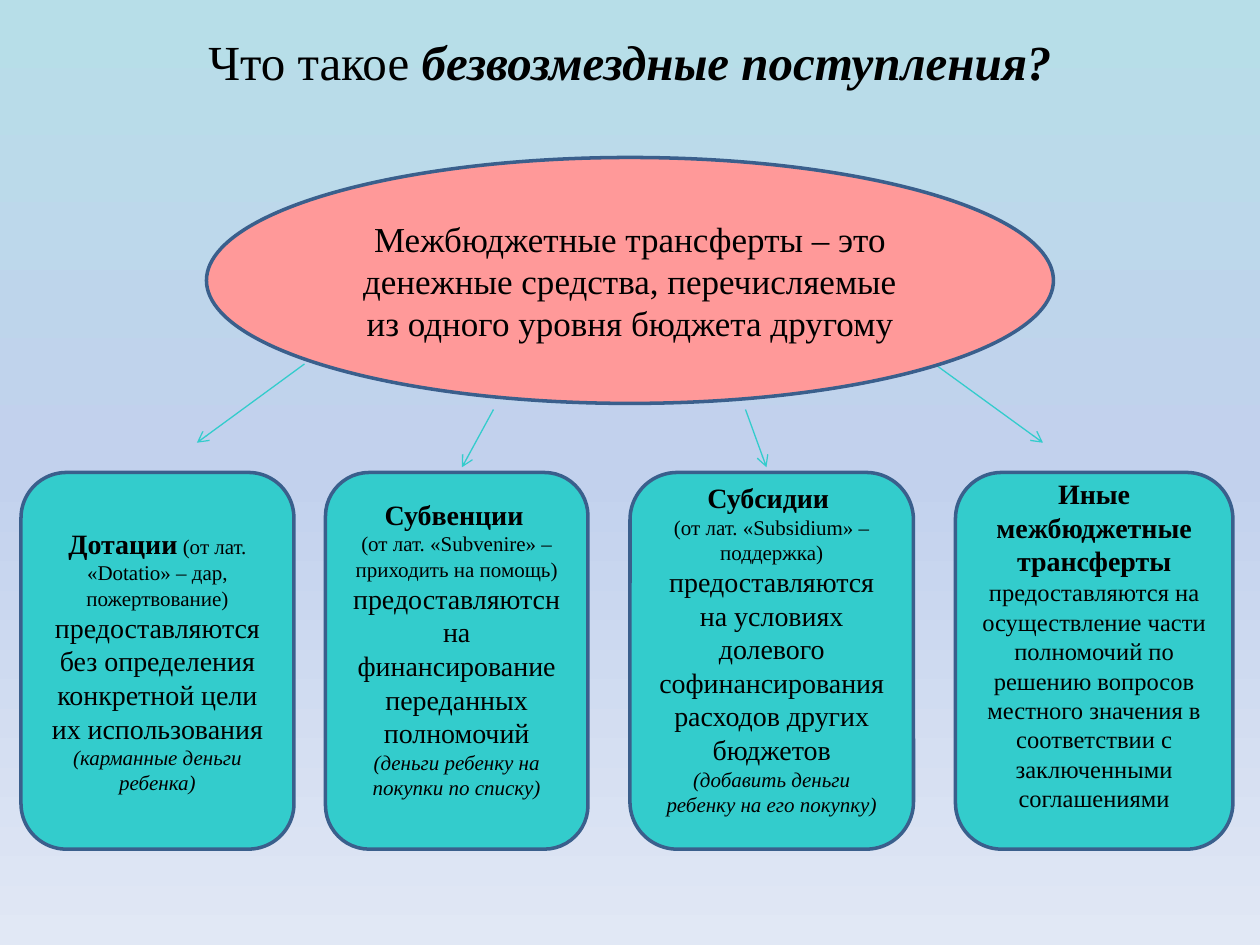
from copy import deepcopy

from lxml import etree
from pptx import Presentation
from pptx.dml.color import RGBColor
from pptx.enum.shapes import MSO_CONNECTOR as CONN, MSO_SHAPE as SHAPE
from pptx.enum.text import MSO_ANCHOR as ANCHOR, PP_ALIGN as ALIGN
from pptx.oxml.ns import qn
from pptx.util import Pt

FONT = "Times New Roman"
COLORS = {
    "text": "000000", "teal": "33CCCC", "pink": "FF9999", "border": "3A5F8C",
    "sky_top": "B7DEE8", "sky_mid": "C2D1ED", "sky_low": "E1E8F5",
}
CARD_TOP, CARD_HEIGHT = 270, 215.25

# Card: left, width, space below the text, paragraphs of (text, size, style)
CARDS = [
    (12, 156, 0, [
        [("Дотации", 16, "b"), (" ", 12, "b"),
         ("(от лат. «Dotatio» – дар, пожертвование) ", 12, ""),
         ("предоставляются без определения конкретной цели их использования", 16, "")],
        [("(карманные деньги ребенка)", 12, "i")]]),
    (186, 150, 14, [
        [("Субвенции", 16, "b"), (" ", 12, "b")],
        [("(от лат. «Subvenire» – приходить на помощь) ", 12, ""),
         ("предоставляютснна финансирование переданных полномочий", 16, "")],
        [("(деньги ребенку на покупки по списку)", 12, "i")]]),
    (360, 162, 14, [
        [("Субсидии ", 16, "b")],
        [("(от лат. «Subsidium» – поддержка) ", 12, ""),
         ("предоставляются на условиях долевого софинансирования расходов "
          "других бюджетов", 16, "")],
        [("(добавить деньги ребенку на его покупку)", 12, "i")]]),
    (546, 158.5, 18.4, [
        [("Иные межбюджетные трансферты", 16, "b")],
        [("предоставляются на осуществление части полномочий по решению вопросов "
          "местного значения в соответствии с заключенными соглашениями", 14, "")]]),
]
OUTER_ARROWS = [(174, 208, 112.5, 253), (534, 208, 596, 253)]
INNER_ARROWS = [(282, 234, 264, 267), (426, 234, 438, 267)]


def rgb(name):
    return RGBColor.from_string(COLORS[name])


def write(s, paragraphs):
    tf = s.text_frame
    tf.word_wrap = True
    tf.vertical_anchor = ANCHOR.MIDDLE
    for i, runs in enumerate(paragraphs):
        p = tf.add_paragraph() if i else tf.paragraphs[0]
        p.alignment = ALIGN.CENTER
        for text, size, style in runs:
            r = p.add_run()
            r.text = text
            r.font.name, r.font.size = FONT, Pt(size)
            r.font.bold, r.font.italic = "b" in style, "i" in style
            r.font.color.rgb = rgb("text")


def add_background(slide):
    fill = slide.background.fill
    fill.gradient()
    fill.gradient_angle = 270
    stops = fill.gradient_stops
    last = slide.background._cSld.find(".//" + qn("a:gsLst"))[-1]
    last.addprevious(deepcopy(last))
    stops = fill.gradient_stops
    for stop, position, name in zip(stops, (0, 0.5, 1), ("sky_top", "sky_mid", "sky_low")):
        stop.position = position
        stop.color.rgb = rgb(name)


def add_title(slide, x, y, w, h):
    s = slide.shapes.add_textbox(Pt(x), Pt(y), Pt(w), Pt(h))
    write(s, [[("Что такое ", 28, ""), ("безвозмездные поступления?", 28, "bi")]])


def add_block(slide, kind, x, y, w, h, color, paragraphs):
    s = slide.shapes.add_shape(kind, Pt(x), Pt(y), Pt(w), Pt(h))
    s.shadow.inherit = False
    s.fill.solid()
    s.fill.fore_color.rgb = rgb(color)
    s.line.color.rgb = rgb("border")
    s.line.width = Pt(2)
    write(s, paragraphs)
    return s


def add_definition(slide, x, y, w, h):
    add_block(slide, SHAPE.OVAL, x, y, w, h, "pink", [[
        ("Межбюджетные трансферты – это денежные средства, перечисляемые "
         "из одного уровня бюджета другому", 20, "")]])


def add_cards(slide, y, h):
    for x, w, space_below, paragraphs in CARDS:
        s = add_block(slide, SHAPE.FLOWCHART_ALTERNATE_PROCESS, x, y, w, h,
                      "teal", paragraphs)
        s.text_frame.margin_bottom = Pt(3.6 + space_below)


def add_arrows(slide, arrows):
    for ends in arrows:
        s = slide.shapes.add_connector(CONN.STRAIGHT, *map(Pt, ends))
        s.line.color.rgb = rgb("teal")
        s.line.width = Pt(0.75)
        etree.SubElement(s.line._get_or_add_ln(), qn("a:tailEnd"), type="arrow")
        etree.SubElement(s._element.spPr, qn("a:effectLst"))


def main():
    prs = Presentation()
    prs.slide_width, prs.slide_height = Pt(720), Pt(540)
    slide = prs.slides.add_slide(prs.slide_layouts[6])
    add_background(slide)
    add_title(slide, 36, 12, 648, 46)
    add_cards(slide, CARD_TOP, CARD_HEIGHT)
    # The ellipse covers the starts of the outer arrows
    add_arrows(slide, OUTER_ARROWS)
    add_definition(slide, 118, 90, 484, 140.5)
    add_arrows(slide, INNER_ARROWS)
    prs.save("out.pptx")


if __name__ == "__main__":
    main()
